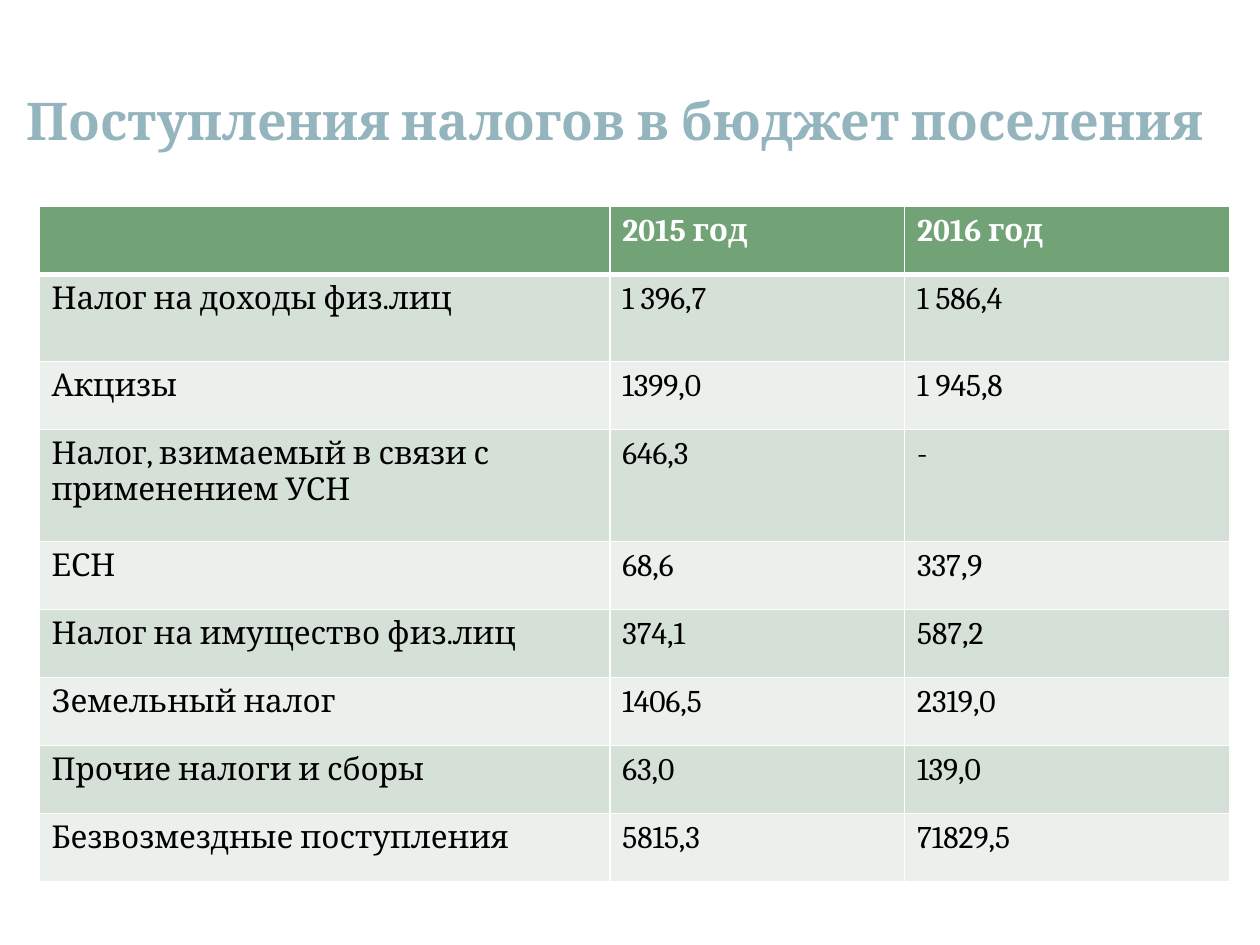
from lxml.etree import SubElement
from pptx import Presentation
from pptx.dml.color import RGBColor
from pptx.enum.text import MSO_ANCHOR, PP_ALIGN
from pptx.oxml.ns import qn
from pptx.util import Inches, Pt

FONT = "Cambria"
WHITE, BLACK, TITLE_BLUE = "FFFFFF", "000000", "94B5BE"
HEADER_GREEN, BANDS = "72A376", ("D5E0D6", "EBF0EC")

COLUMN_WIDTHS = (4.53, 2.34, 2.58)
ROW_HEIGHT = 0.54
TALL_ROWS = {1: 0.69, 3: 0.89}

TAX_ROWS = [
    ("", "2015 год", "2016 год"),
    ("Налог на доходы физ.лиц", "1 396,7", "1 586,4"),
    ("Акцизы", "1399,0", "1 945,8"),
    ("Налог, взимаемый в связи с применением УСН", "646,3", "-"),
    ("ЕСН", "68,6", "337,9"),
    ("Налог на имущество физ.лиц", "374,1", "587,2"),
    ("Земельный налог", "1406,5", "2319,0"),
    ("Прочие налоги и сборы", "63,0", "139,0"),
    ("Безвозмездные поступления", "5815,3", "71829,5"),
]


def color(hex_value):
    return RGBColor.from_string(hex_value)


def write_text(frame, text, size=18, fill=BLACK, bold=False, align=PP_ALIGN.LEFT):
    paragraph = frame.paragraphs[0]
    paragraph.alignment = align
    paragraph.font.size = Pt(size)
    if text:
        run = paragraph.add_run()
        run.text = text
        run.font.name = FONT
        run.font.size = Pt(size)
        run.font.bold = bold
        run.font.color.rgb = color(fill)


def add_title(slide, text):
    box = slide.shapes.add_textbox(0, Inches(0.25), Inches(9.77), Inches(1))
    frame = box.text_frame
    frame.word_wrap = True
    frame.vertical_anchor = MSO_ANCHOR.BOTTOM
    write_text(frame, text, size=29.7, fill=TITLE_BLUE, bold=True,
               align=PP_ALIGN.CENTER)


def set_borders(cell, bottom=1, top=1):
    properties = cell._tc.get_or_add_tcPr()
    for side, width in (("L", 1), ("R", 1), ("T", top), ("B", bottom)):
        line = SubElement(properties, qn(f"a:ln{side}"), w=str(Pt(width)))
        solid = SubElement(line, qn("a:solidFill"))
        SubElement(solid, qn("a:srgbClr"), val=WHITE)


def format_cell(cell, text, row_index):
    is_header = row_index == 0
    # Borders come before the fill in the cell properties
    set_borders(cell, bottom=3 if is_header else 1, top=3 if row_index == 1 else 1)
    cell.fill.solid()
    cell.fill.fore_color.rgb = color(
        HEADER_GREEN if is_header else BANDS[(row_index - 1) % 2])
    write_text(cell.text_frame, text, fill=WHITE if is_header else BLACK,
               bold=is_header)


def add_tax_table(slide, rows):
    heights = [TALL_ROWS.get(index, ROW_HEIGHT) for index in range(len(rows))]
    frame = slide.shapes.add_table(
        len(rows), len(COLUMN_WIDTHS), Inches(0.31), Inches(1.64),
        Inches(sum(COLUMN_WIDTHS)), Inches(sum(heights)))
    table = frame.table
    for column, width in zip(table.columns, COLUMN_WIDTHS):
        column.width = Inches(width)
    for row_index, (row, height) in enumerate(zip(table.rows, heights)):
        row.height = Inches(height)
        for cell, text in zip(row.cells, rows[row_index]):
            format_cell(cell, text, row_index)


def main():
    presentation = Presentation()
    presentation.slide_width = Inches(10)
    presentation.slide_height = Inches(7.5)
    slide = presentation.slides.add_slide(presentation.slide_layouts[6])

    # Heading
    add_title(slide, "Поступления налогов в бюджет поселения")
    # Tax receipts by year
    add_tax_table(slide, TAX_ROWS)

    presentation.save("out.pptx")


if __name__ == "__main__":
    main()
